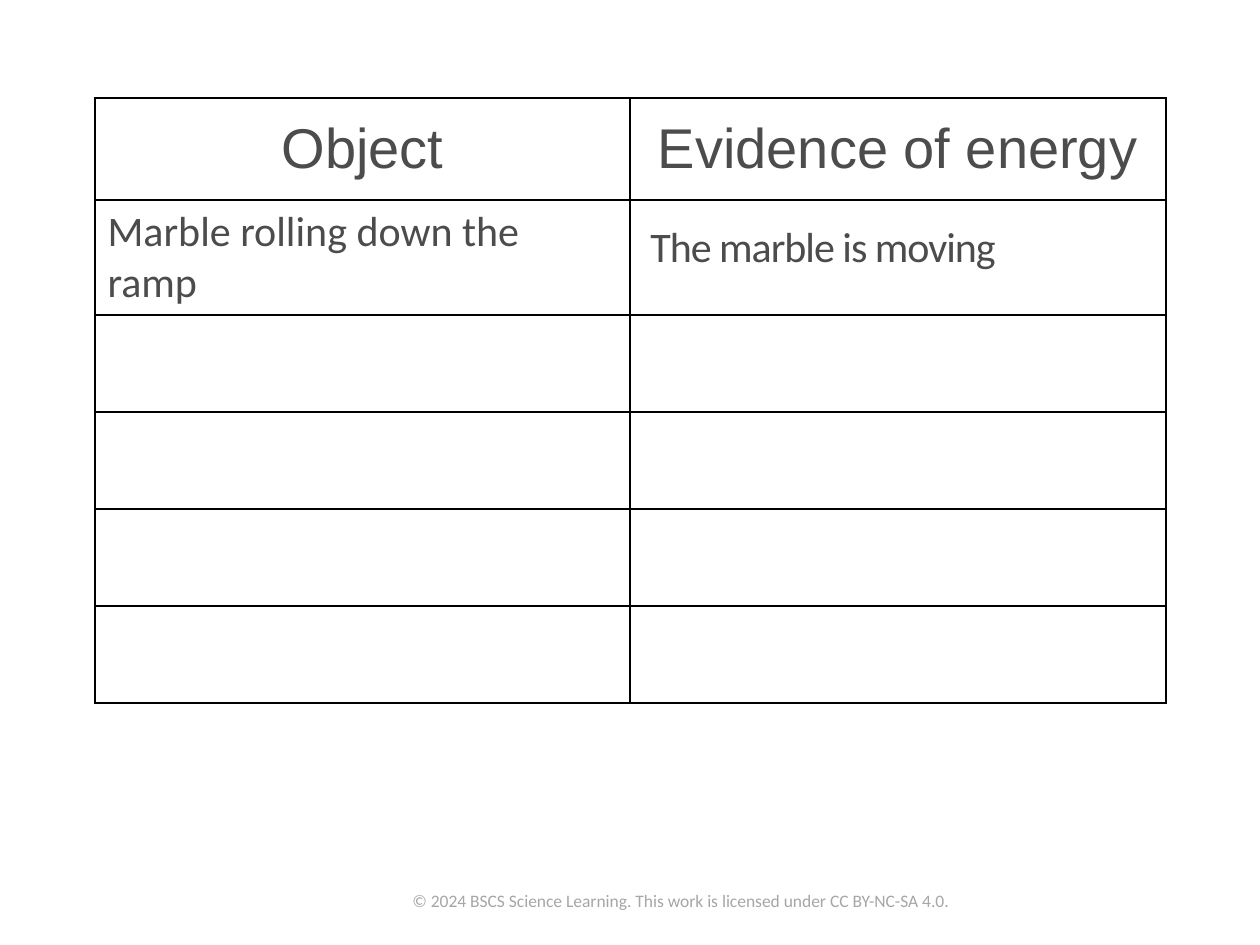
import pptx
import pptx.dml.color
import pptx.enum.text
import pptx.oxml
import pptx.oxml.ns
import pptx.util

PX = 914400 / 126


class Theme:
    text = pptx.dml.color.RGBColor.from_string("4C4C4C")
    muted = pptx.dml.color.RGBColor.from_string("A6A6A6")
    border = "000000"
    border_width = pptx.util.Pt(1)
    heading_font, body_font = "Arial", "Calibri"
    heading_size, body_size, footer_size = 32, 24, 10


def px(*lengths):
    """Turn pixel lengths into a list of EMU lengths."""
    return [pptx.util.Emu(round(length * PX)) for length in lengths]


def style(para, name, size, color):
    para.font.name = name
    para.font.size = pptx.util.Pt(size)
    para.font.color.rgb = color


deck = pptx.Presentation()
deck.slide_width, deck.slide_height = px(1260, 945)
page = deck.slides.add_slide(deck.slide_layouts[6])

# Evidence table
headings = ["Object", "Evidence of energy"]
rows = [headings, ["Marble rolling down the ramp", ""]] + [["", ""]] * 4
row_heights = px(102, *[97] * 5)
table = page.shapes.add_table(len(rows), 2, *px(95, 98, 1071, 587)).table
table.first_row = False
table.horz_banding = False
for column, width in zip(table.columns, px(535, 536)):
    column.width = width

for row_index, texts in enumerate(rows):
    table.rows[row_index].height = row_heights[row_index]
    for column_index, text in enumerate(texts):
        cell = table.cell(row_index, column_index)
        cell.text = text
        para = cell.text_frame.paragraphs[0]
        if row_index == 0:
            cell.vertical_anchor = pptx.enum.text.MSO_ANCHOR.MIDDLE
            para.alignment = pptx.enum.text.PP_ALIGN.CENTER
            style(para, Theme.heading_font, Theme.heading_size, Theme.text)
        else:
            style(para, Theme.body_font, Theme.body_size, Theme.text)

        properties = cell._tc.get_or_add_tcPr()
        for side in ("lnL", "lnR", "lnT", "lnB"):
            properties.append(pptx.oxml.parse_xml(
                f'<a:{side} {pptx.oxml.ns.nsdecls("a")} w="{Theme.border_width}">'
                f'<a:solidFill><a:srgbClr val="{Theme.border}"/></a:solidFill>'
                f'</a:{side}>'))
        if row_index == len(rows) - 1:
            cell.fill.solid()
            cell.fill.fore_color.rgb = pptx.dml.color.RGBColor(255, 255, 255)
        else:
            cell.fill.background()

# Example answer, laid over the second column
answer = page.shapes.add_textbox(*px(638, 220, 471, 136)).text_frame
answer.word_wrap = True
para = answer.paragraphs[0]
para.line_spacing = 0.9
span = para.add_run()
span.text = "The marble is moving"
span.font._element.set("spc", "-60")
style(para, Theme.body_font, Theme.body_size, Theme.text)

# Copyright line
footer = page.shapes.add_textbox(*px(400, 876, 611, 50)).text_frame
footer.word_wrap = True
footer.vertical_anchor = pptx.enum.text.MSO_ANCHOR.MIDDLE
para = footer.paragraphs[0]
para.text = "© 2024 BSCS Science Learning. This work is licensed under CC BY-NC-SA 4.0."
style(para, Theme.body_font, Theme.footer_size, Theme.muted)

deck.save("out.pptx")
